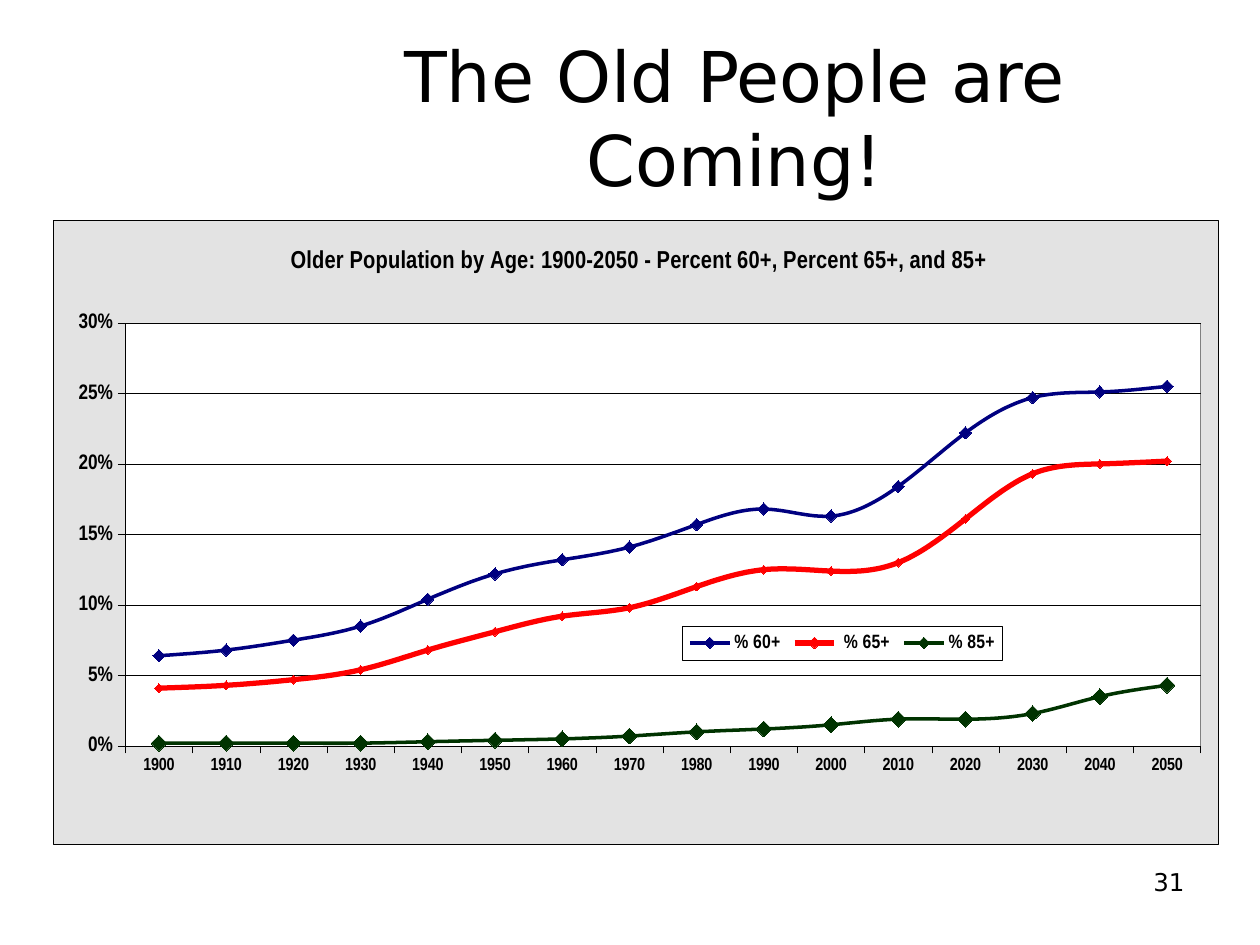
import pptx
import pptx.chart.data
import pptx.dml.color
import pptx.enum.chart
import pptx.enum.text
import pptx.oxml
import pptx.oxml.ns
import pptx.util
from pptx.util import Inches, Pt

BLACK = "000000"
YEARS = [str(year) for year in range(1900, 2051, 10)]
# name, colour, line width, marker size, values
SERIES = [
    ("% 60+", "000080", 2, 7,
     [0.064, 0.068, 0.075, 0.085, 0.104, 0.122, 0.132, 0.141,
      0.157, 0.168, 0.163, 0.184, 0.222, 0.247, 0.251, 0.255]),
    (" % 65+", "FF0000", 3, 5,
     [0.041, 0.043, 0.047, 0.054, 0.068, 0.081, 0.092, 0.098,
      0.113, 0.125, 0.124, 0.13, 0.161, 0.193, 0.2, 0.202]),
    ("% 85+", "003300", 2, 9,
     [0.002, 0.002, 0.002, 0.002, 0.003, 0.004, 0.005, 0.007,
      0.01, 0.012, 0.015, 0.019, 0.019, 0.023, 0.035, 0.043]),
]


def color(value):
    return pptx.dml.color.RGBColor.from_string(value)


def chart_xml(tag, content):
    return pptx.oxml.parse_xml(
        f'<c:{tag} {pptx.oxml.ns.nsdecls("c", "a")}>{content}</c:{tag}>')


def area_format(fill, line):
    return chart_xml("spPr", (
        f'<a:solidFill><a:srgbClr val="{fill}"/></a:solidFill>'
        f'<a:ln w="{Pt(0.25)}"><a:solidFill><a:srgbClr val="{line}"/>'
        '</a:solidFill></a:ln>'))


def manual_layout(x, y, w=None, h=None, inner=False):
    """Layout in fractions of the chart area."""
    parts = ['<c:layoutTarget val="inner"/>'] if inner else []
    parts += ['<c:xMode val="edge"/>', '<c:yMode val="edge"/>']
    sizes = {"x": x, "y": y, "w": w, "h": h}
    parts += [f'<c:{key} val="{size}"/>'
              for key, size in sizes.items() if size is not None]
    return chart_xml(
        "layout", f'<c:manualLayout>{"".join(parts)}</c:manualLayout>')


def place(element, layout, after=None):
    """Replace the element's layout, setting it after the named child or first."""
    for old in element.findall(pptx.oxml.ns.qn("c:layout")):
        element.remove(old)
    if after:
        element.find(pptx.oxml.ns.qn(after)).addnext(layout)
    else:
        element.insert(0, layout)


class Builder:
    text_font = "DejaVu Sans"
    chart_font = "Arial Narrow"

    def __init__(self, page):
        self.page = page

    def style_font(self, font, size, name, bold=False):
        font.size = Pt(size)
        font.name = name
        font.bold = bold
        font.color.rgb = color(BLACK)

    def fill_text(self, box, text, size, align):
        frame = box.text_frame
        frame.word_wrap = True
        frame.text = text
        paragraph = frame.paragraphs[0]
        paragraph.alignment = align
        self.style_font(paragraph.runs[0].font, size, self.text_font)

    def title(self, text, left, top, width, height):
        box = self.page.shapes.title
        box.left, box.top = Inches(left), Inches(top)
        box.width, box.height = Inches(width), Inches(height)
        self.fill_text(box, text, 40, pptx.enum.text.PP_ALIGN.CENTER)
        box.text_frame.vertical_anchor = pptx.enum.text.MSO_ANCHOR.MIDDLE

    def page_number(self, text, left, top, width, height):
        box = self.page.shapes.add_textbox(
            Inches(left), Inches(top), Inches(width), Inches(height))
        self.fill_text(box, text, 14, pptx.enum.text.PP_ALIGN.RIGHT)

    def thin_line(self, line):
        line.color.rgb = color(BLACK)
        line.width = Pt(0.25)

    def line_chart(self, title, left, top, width, height):
        data = pptx.chart.data.CategoryChartData(number_format="0.0%")
        data.categories = YEARS
        for name, _, _, _, values in SERIES:
            data.add_series(name, values)
        chart = self.page.shapes.add_chart(
            pptx.enum.chart.XL_CHART_TYPE.LINE_MARKERS,
            Inches(left), Inches(top), Inches(width), Inches(height),
            data).chart
        self.style_font(chart.font, 16.5, "Arial")
        self.chart_title(chart, title)
        self.axes(chart)
        self.legend(chart)
        self.series(chart.plots[0])

        chart_space = chart._chartSpace
        chart_space.chart.addnext(area_format("E3E3E3", BLACK))
        plot_area = chart_space.chart.plotArea
        place(plot_area, manual_layout(0.062, 0.164, 0.923, 0.679, inner=True))
        plot_area.append(area_format("FFFFFF", "808080"))

    def chart_title(self, chart, text):
        chart.has_title = True
        paragraph = chart.chart_title.text_frame.paragraphs[0]
        paragraph.text = text
        self.style_font(paragraph.runs[0].font, 14, self.chart_font, True)
        place(chart.chart_title._element, manual_layout(0.2, 0.035), "c:tx")

    def axes(self, chart):
        for axis, size in ((chart.category_axis, 10), (chart.value_axis, 12)):
            axis.major_tick_mark = pptx.enum.chart.XL_TICK_MARK.OUTSIDE
            axis.minor_tick_mark = pptx.enum.chart.XL_TICK_MARK.NONE
            self.style_font(axis.tick_labels.font, size, self.chart_font, True)
            self.thin_line(axis.format.line)
        values = chart.value_axis
        values.minimum_scale, values.maximum_scale = 0, 0.3
        values.major_unit = 0.05
        values.tick_labels.number_format = "0%"
        values.tick_labels.number_format_is_linked = False
        values.has_major_gridlines = True
        self.thin_line(values.major_gridlines.format.line)

    def legend(self, chart):
        chart.has_legend = True
        legend = chart.legend
        legend.position = pptx.enum.chart.XL_LEGEND_POSITION.RIGHT
        legend.include_in_layout = False
        self.style_font(legend.font, 11, self.chart_font, True)
        element = legend._element
        place(element, manual_layout(0.54, 0.65, 0.275, 0.055), "c:legendPos")
        element.find(pptx.oxml.ns.qn("c:overlay")).addnext(
            area_format("FFFFFF", BLACK))

    def series(self, plot):
        plot.vary_by_categories = False
        for series, (_, shade, width, size, _) in zip(plot.series, SERIES):
            series.smooth = True
            series.format.line.color.rgb = color(shade)
            series.format.line.width = Pt(width)
            marker = series.marker
            marker.style = pptx.enum.chart.XL_MARKER_STYLE.DIAMOND
            marker.size = size
            marker.format.fill.solid()
            marker.format.fill.fore_color.rgb = color(shade)
            marker.format.line.color.rgb = color(shade)


def main():
    deck = pptx.Presentation()
    deck.slide_width, deck.slide_height = Inches(10), Inches(7.5)
    builder = Builder(deck.slides.add_slide(deck.slide_layouts[5]))
    builder.title("The Old People are Coming!", 2.16, 0.3, 7.34, 1.25)
    builder.line_chart(
        "Older Population by Age: 1900-2050 - Percent 60+, Percent 65+, and 85+",
        0.42, 1.75, 9.25, 4.95)
    builder.page_number("31", 7.17, 6.83, 2.33, 0.52)
    deck.save("out.pptx")


if __name__ == "__main__":
    main()
